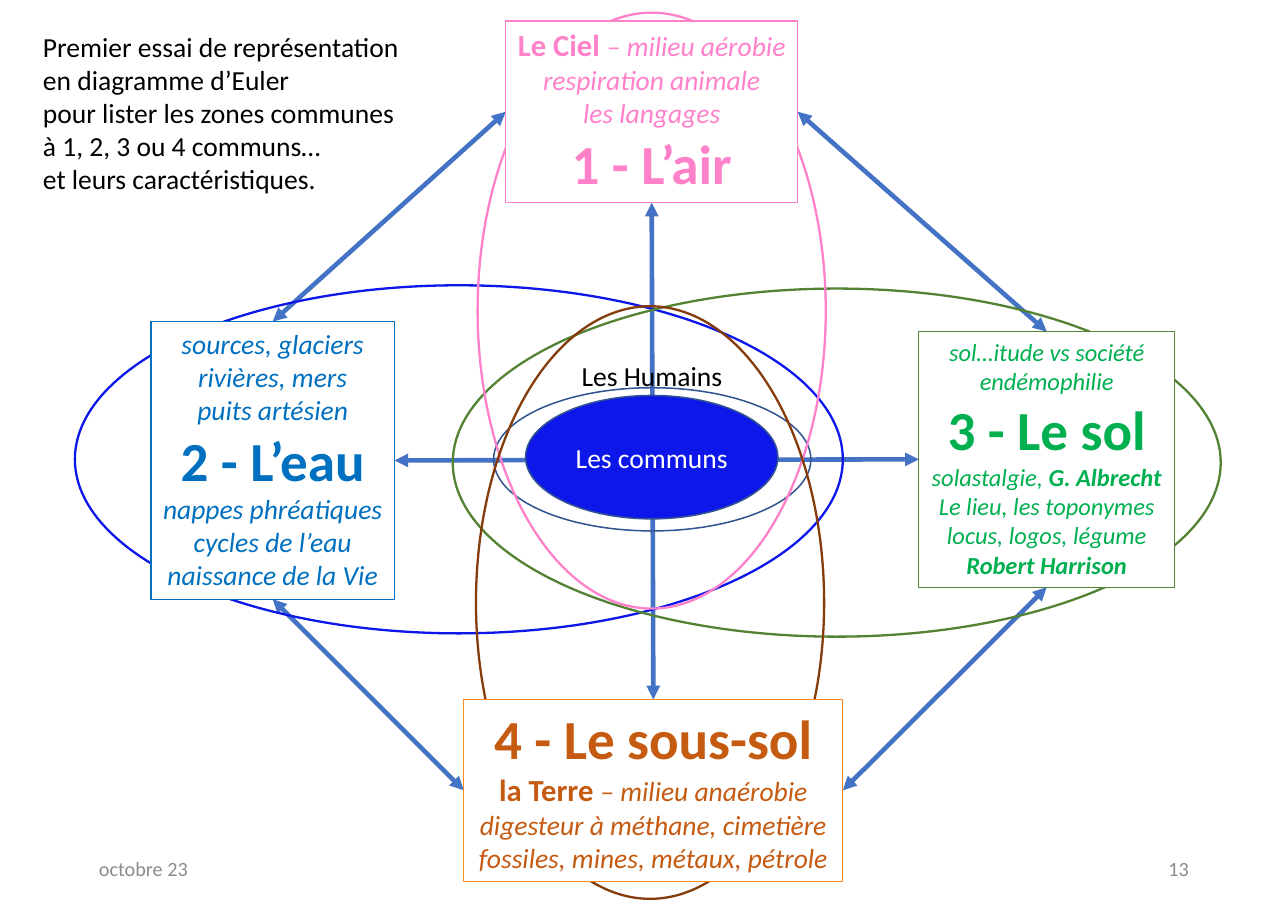
import pptx
import pptx.dml.color
import pptx.enum.dml
import pptx.enum.shapes
import pptx.enum.text
import pptx.oxml
import pptx.oxml.ns
import pptx.util

CELL = pptx.util.Inches(0.1)
COLUMNS, ROWS = 116.9, 82.7
SHAPE = pptx.enum.shapes.MSO_SHAPE
ALIGN = pptx.enum.text.PP_ALIGN
ANCHOR = pptx.enum.text.MSO_ANCHOR
FIT = pptx.enum.text.MSO_AUTO_SIZE
TOP, LEFT, BOTTOM, RIGHT = range(4)


class Theme:
    """Font, type sizes and colours of the slide."""
    font = "Calibri"
    small, body, large, heading, footer = 16, 18, 20, 36, 13.2
    black, white, grey = "000000", "FFFFFF", "8C8C8C"
    arrow, core, core_line = "4472C4", "0E17E9", "325491"
    air, water = "FF81CA", "0070C0"
    soil, soil_line = "00B050", "548235"
    subsoil, subsoil_line, subsoil_ring = "C55A11", "FF8822", "843C0B"


def rgb(code):
    """Turn a hexadecimal code into a colour."""
    return pptx.dml.color.RGBColor.from_string(code)


def grid(*cells):
    """Turn grid cells into lengths."""
    return [round(c * CELL) for c in cells]


def write(sp, lines, size=Theme.body, color=Theme.black, style="", align=ALIGN.LEFT,
          anchor=ANCHOR.TOP, wrap=False, fit=FIT.NONE):
    """Write lines, each a string or a list of (text, size, style) runs."""
    tf = sp.text_frame
    tf.word_wrap, tf.auto_size, tf.vertical_anchor = wrap, fit, anchor
    for i, line in enumerate(lines):
        p = tf.add_paragraph() if i else tf.paragraphs[0]
        p.alignment = align
        runs = [(line, size, style)] if isinstance(line, str) else line
        for text, run_size, run_style in runs:
            r = p.add_run()
            r.text = text
            r.font.name, r.font.size = Theme.font, pptx.util.Pt(run_size)
            r.font.bold, r.font.italic = "b" in run_style, "i" in run_style
            r.font.color.rgb = rgb(color)


def add_outline(s, kind, cells, line, width, fill=None, rotation=0):
    """Add a preset shape with an outline and an optional fill."""
    sp = s.shapes.add_shape(kind, *grid(*cells))
    sp.shadow.inherit = False
    sp.rotation = rotation
    sp.line.color.rgb, sp.line.width = rgb(line), pptx.util.Pt(width)
    if fill:
        sp.fill.solid()
        sp.fill.fore_color.rgb = rgb(fill)
    else:
        sp.fill.background()
    return sp


def add_ellipse(s, cells, line, width=1.5, **kwargs):
    """Add an ellipse."""
    return add_outline(s, SHAPE.OVAL, cells, line, width, **kwargs)


def add_zone(s, cells, line, lines, **kwargs):
    """Add a white box that describes one of the commons."""
    sp = add_outline(s, SHAPE.RECTANGLE, cells, line, 0.75, fill=Theme.white)
    write(sp, lines, style="i", align=ALIGN.CENTER, fit=FIT.SHAPE_TO_FIT_TEXT, **kwargs)
    return sp


def add_label(s, cells, text, **kwargs):
    """Add a text box with one line."""
    write(s.shapes.add_textbox(*grid(*cells)), [text], **kwargs)


def add_arrow(s, start, start_side, end, end_side):
    """Join two zones with a double arrow behind everything else."""
    cxn = s.shapes.add_connector(pptx.enum.shapes.MSO_CONNECTOR.STRAIGHT, 0, 0, 0, 0)
    cxn.begin_connect(start, start_side)
    cxn.end_connect(end, end_side)
    cxn.line.color.rgb, cxn.line.width = rgb(Theme.arrow), pptx.util.Pt(3)
    ln = cxn.line._get_or_add_ln()
    for tag in ("a:headEnd", "a:tailEnd"):
        end_mark = pptx.oxml.parse_xml(f"<{tag} {pptx.oxml.ns.nsdecls('a')} type='triangle'/>")
        ln.append(end_mark)
    effects = pptx.oxml.parse_xml(f"<a:effectLst {pptx.oxml.ns.nsdecls('a')}/>")
    ln.addnext(effects)
    s.shapes._spTree.insert(2, cxn._element)


def add_title(s, cells, lines):
    """Place and write the slide's title."""
    sp = s.shapes.title
    sp.left, sp.top, sp.width, sp.height = grid(*cells)
    write(sp, lines)


def add_rings(s):
    """Draw the Euler diagram and its centre."""
    core = add_ellipse(s, (47.7, 35.9, 22.9, 11.2), Theme.core_line, 1, fill=Theme.core)
    write(core, ["Les communs"], color=Theme.white, align=ALIGN.CENTER,
          anchor=ANCHOR.MIDDLE, wrap=True)
    add_ellipse(s, (44.8, 35.2, 28.8, 13), Theme.core_line, 1)
    add_label(s, (51.8, 32.1, 14.9, 4), "Les Humains")
    add_ellipse(s, (6.8, 25.9, 69.7, 31.6), Theme.core)
    add_ellipse(s, (41.1, 26.2, 69.7, 31.6), Theme.soil_line)
    add_ellipse(s, (32.1, 12.4, 54.1, 31.6), Theme.air, rotation=90)
    add_ellipse(s, (32.1, 38.9, 53.8, 31.6), Theme.subsoil_ring, rotation=90)


def add_zones(s):
    """Add the four zones and return them."""
    def heading(text):
        return [(text, Theme.heading, "b")]

    def medium(name, text):
        return [(name, Theme.large, "b"), (text, Theme.body, "i")]

    water = add_zone(s, (13.7, 29.2, 22.1, 25.2), Theme.water, [
        "sources, glaciers", "rivières, mers", "puits artésien", heading("2 - L’eau"),
        "nappes phréatiques", "cycles de l’eau", "naissance de la Vie"], color=Theme.water)
    air = add_zone(s, (45.9, 1.9, 26.5, 16.5), Theme.air, [
        medium("Le Ciel ", "– milieu aérobie"), "respiration animale", "les langages",
        heading("1 - L’air")], color=Theme.air)
    subsoil = add_zone(s, (42.1, 63.5, 34.4, 16.5), Theme.subsoil_line, [
        heading("4 - Le sous-sol"), medium("la Terre ", "– milieu anaérobie"),
        "digesteur à méthane, cimetière", "fossiles, mines, métaux, pétrole"],
        color=Theme.subsoil)
    soil = add_zone(s, (83.4, 30.1, 23.2, 23.2), Theme.soil_line, [
        "sol…itude vs société", "endémophilie", heading("3 - Le sol"),
        [("solastalgie, ", Theme.small, "i"), ("G. Albrecht", Theme.small, "bi")],
        "Le lieu, les toponymes", "locus, logos, légume",
        [("Robert Harrison", Theme.small, "bi")]], color=Theme.soil, size=Theme.small)
    return air, water, soil, subsoil


def main():
    """Build and save the slide."""
    prs = pptx.Presentation()
    prs.slide_width, prs.slide_height = grid(COLUMNS, ROWS)
    s = prs.slides.add_slide(prs.slide_layouts[5])
    add_title(s, (2.9, 2.2, 34.8, 16.2), [
        "Premier essai de représentation", "en diagramme d’Euler",
        "pour lister les zones communes", "à 1, 2, 3 ou 4 communs…",
        "et leurs caractéristiques."])
    add_rings(s)
    air, water, soil, subsoil = add_zones(s)
    for ends in ((air, LEFT, water, TOP), (air, RIGHT, soil, TOP),
                 (air, BOTTOM, subsoil, TOP), (subsoil, LEFT, water, BOTTOM),
                 (soil, LEFT, water, RIGHT), (soil, BOTTOM, subsoil, RIGHT)):
        add_arrow(s, *ends)
    for left, text, align in ((8, "octobre 23", ALIGN.LEFT), (82.6, "13", ALIGN.RIGHT)):
        add_label(s, (left, 76.6, 26.3, 4.4), text, size=Theme.footer, color=Theme.grey,
                  align=align, anchor=ANCHOR.MIDDLE, wrap=True)
    prs.save("out.pptx")


if __name__ == "__main__":
    main()
